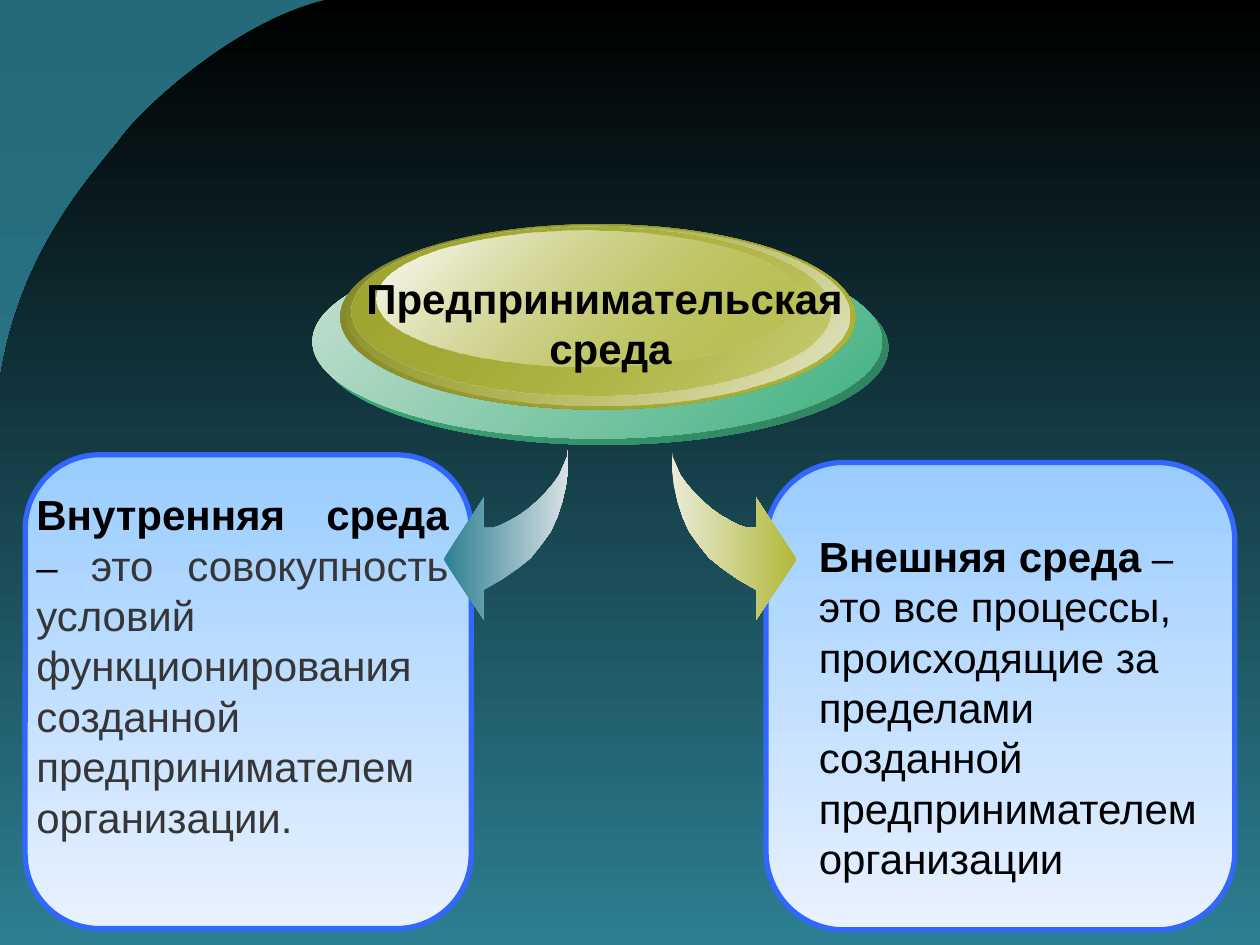
import pptx
import pptx.dml.color
import pptx.enum.shapes
import pptx.enum.text
import pptx.util
from lxml import etree
from pptx.oxml.ns import qn

Inches = pptx.util.Inches
rgb = pptx.dml.color.RGBColor.from_string
SHAPE = pptx.enum.shapes.MSO_SHAPE
ALIGN = pptx.enum.text.PP_ALIGN


def set_gradient(fill, start, end, angle):
    """Two-colour gradient; the angle runs clockwise from left to right."""
    fill.gradient()
    fill.gradient_angle = -angle % 360
    for stop, colour in zip(fill.gradient_stops, (start, end)):
        stop.color.rgb = rgb(colour)


def add_outline(points, start, end, angle):
    corners = [(Inches(x), Inches(y)) for x, y in points]
    builder = slide.shapes.build_freeform(*corners[0])
    builder.add_line_segments(corners[1:], close=True)
    outline = builder.convert_to_shape()
    outline.shadow.inherit = False
    set_gradient(outline.fill, start, end, angle)
    outline.line.fill.background()


prs = pptx.Presentation()
prs.slide_width, prs.slide_height = Inches(10), Inches(7.5)
slide = prs.slides.add_slide(prs.slide_layouts[6])

# Background with a dark field behind a curved edge
set_gradient(slide.background.fill, "256A7A", "2C7F92", 90)
bezier_curves = [
    [(2.58, 0), (1.9, 0.16), (1.16, 0.83), (0.98, 1.07)],
    [(0.98, 1.07), (0.8, 1.32), (0.16, 1.94), (0, 3.01)],
]
field_edge = [(2.58, 0)]
STEPS = 24
for curve in bezier_curves:
    for step in range(1, STEPS + 1):
        t = step / STEPS
        weights = ((1 - t) ** 3, 3 * t * (1 - t) ** 2, 3 * t ** 2 * (1 - t), t ** 3)
        field_edge.append(tuple(sum(w * p[axis] for w, p in zip(weights, curve))
                                for axis in (0, 1)))
add_outline(field_edge + [(0, 7.5), (10, 7.5), (10, 0)], "000000", "2C7F92", 90)

# Panels: external on the right, internal on the left
for box in [(6.08, 3.67, 3.72, 3.71), (0.2, 3.61, 3.54, 3.76)]:
    panel = slide.shapes.add_shape(SHAPE.ROUNDED_RECTANGLE, *map(Inches, box))
    panel.shadow.inherit = False
    set_gradient(panel.fill, "99CCFF", "E9F2FF", 90)
    panel.line.color.rgb = rgb("3366FF")
    panel.line.width = pptx.util.Pt(3)

# Curved arrows, the right one mirroring the left
left_arrow = [
    (4.51, 3.56), (4.51, 3.71), (4.49, 3.86), (4.46, 3.99), (4.42, 4.11),
    (4.37, 4.22), (4.29, 4.33), (4.21, 4.43), (4.11, 4.51), (3.98, 4.6),
    (3.84, 4.68), (3.84, 4.92), (3.52, 4.44), (3.84, 3.95), (3.84, 4.19),
    (3.91, 4.19), (3.97, 4.17), (4.05, 4.13), (4.12, 4.09), (4.19, 4.04),
    (4.26, 3.98), (4.33, 3.91), (4.39, 3.84), (4.44, 3.77), (4.47, 3.7),
    (4.5, 3.63),
]
right_arrow = [(9.84 - x, y) for x, y in left_arrow]
add_outline(left_arrow, "2C7F92", "D9E1E4", 0)
add_outline(right_arrow, "EAEBD9", "B2B838", 0)

# Layered oval: box, start and end colour, opacity of each in percent
oval_layers = [
    ((2.53, 1.99, 4.52, 1.54), "3FB180", "2E815E", (100, 100)),
    ((2.48, 1.94, 4.52, 1.54), "C8E1D3", "3FB180", (100, 100)),
    ((2.7, 1.78, 4.09, 1.47), "7F8428", "B2B838", (100, 100)),
    ((2.75, 1.79, 3.99, 1.43), "B2B838", "E8E9D5", (0, 100)),
    ((2.79, 1.8, 3.8, 1.34), "A1A633", "B2B838", (100, 48)),
    ((2.99, 1.83, 3.35, 1.08), "FFFFFF", "B2B838", (100, 38)),
]
for box, start, end, opacities in oval_layers:
    oval = slide.shapes.add_shape(SHAPE.OVAL, *map(Inches, box))
    oval.shadow.inherit = False
    set_gradient(oval.fill, start, end, 45)
    oval.line.fill.background()
    colours = oval._element.spPr.iter(qn("a:srgbClr"))
    for colour, opacity in zip(colours, opacities):
        if opacity < 100:
            etree.SubElement(colour, qn("a:alpha"), val=str(opacity * 1000))

# Texts: box, wrap, alignment, paragraphs of (text, size, bold, colour) runs
texts = [
    ((0.19, 3.83, 3.47, 2.93), True, ALIGN.JUSTIFY, [[
        ("Внутренняя среда ", 24, True, "000000"),
        ("– ", 22, False, "000000"),
        ("это совокупность условий функционирования созданной "
         "предпринимателем организации.", 24, False, "363636")]]),
    ((2.79, 2.11, 4.11, 0.91), False, ALIGN.CENTER, [
        [("Предпринимательская ", 24, True, "000000")],
        [("среда", 24, True, "000000")]]),
    ((6.4, 4.16, 3.32, 2.93), True, ALIGN.LEFT, [[
        ("Внешняя среда", 24, True, "000000"),
        (" – ", 22, False, "000000"),
        ("это все процессы, происходящие за пределами созданной "
         "предпринимателем организации", 24, False, "000000")]]),
]
for box, wrap, alignment, paragraphs in texts:
    frame = slide.shapes.add_textbox(*map(Inches, box)).text_frame
    frame.word_wrap = wrap
    frame.auto_size = pptx.enum.text.MSO_AUTO_SIZE.SHAPE_TO_FIT_TEXT
    for index, runs in enumerate(paragraphs):
        paragraph = frame.add_paragraph() if index else frame.paragraphs[0]
        paragraph.alignment = alignment
        for words, size, bold, colour in runs:
            run = paragraph.add_run()
            run.text = words
            run.font.name = "Arial"
            run.font.size = pptx.util.Pt(size)
            run.font.bold = bold
            run.font.color.rgb = rgb(colour)

prs.save("out.pptx")
